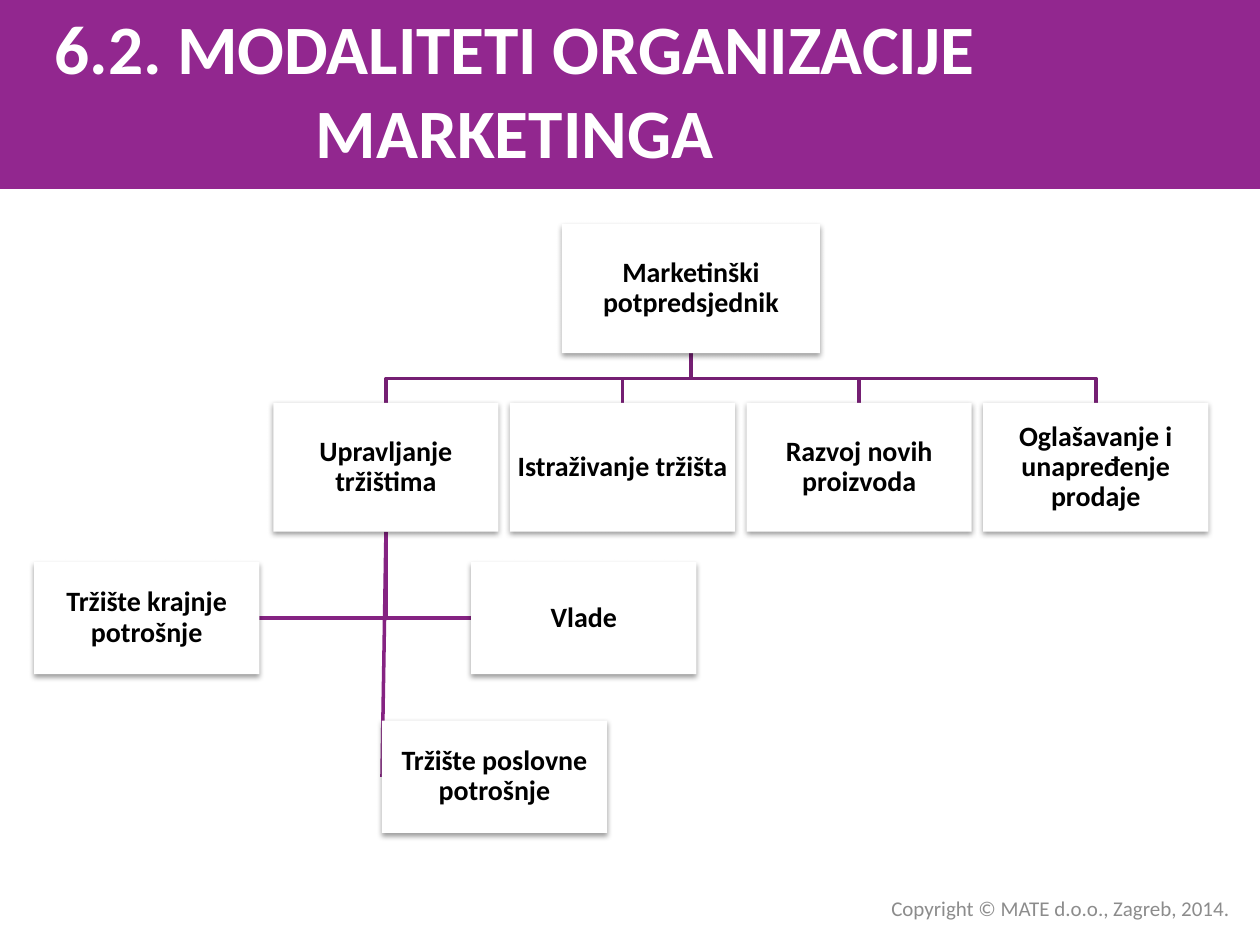
from lxml import etree
from pptx import Presentation
from pptx.dml.color import RGBColor
from pptx.enum.shapes import MSO_CONNECTOR, MSO_SHAPE
from pptx.enum.text import MSO_ANCHOR, PP_ALIGN
from pptx.oxml.ns import qn
from pptx.util import Cm, Pt

RECTANGLE = MSO_SHAPE.RECTANGLE
STRAIGHT = MSO_CONNECTOR.STRAIGHT
MIDDLE = MSO_ANCHOR.MIDDLE
CENTER, RIGHT = PP_ALIGN.CENTER, PP_ALIGN.RIGHT

PURPLE = RGBColor(0x92, 0x27, 0x8F)
STAFF_LINE = RGBColor(0x75, 0x1F, 0x73)
MARKET_LINE = RGBColor(0x85, 0x23, 0x82)
WHITE = RGBColor(0xFF, 0xFF, 0xFF)
BLACK = RGBColor(0, 0, 0)
GRAY = RGBColor(0x8C, 0x8C, 0x8C)
FONT = "Calibri"

# Content
TITLE = "6.2. MODALITETI ORGANIZACIJE MARKETINGA"
COPYRIGHT = "Copyright © MATE d.o.o., Zagreb, 2014."
HEAD = "Marketinški potpredsjednik"
DEPARTMENTS = [
    "Upravljanje tržištima",
    "Istraživanje tržišta",
    "Razvoj novih proizvoda",
    "Oglašavanje i unapređenje prodaje",
]
SIDE_MARKETS = ["Tržište krajnje potrošnje", "Vlade"]
LOWER_MARKET = "Tržište poslovne potrošnje"

# Layout in centimetres: left, top, width, height
BOX_WIDTH, STAFF_HEIGHT, MARKET_HEIGHT = 4.54, 2.6, 2.26
HEAD_AREA = (11.33, 4.52, 5.2, STAFF_HEIGHT)
DEPARTMENT_LEFT, DEPARTMENT_TOP, DEPARTMENT_STEP = 5.51, 8.12, 4.77
BUS_Y = 7.63
SIDE_LEFTS, SIDE_TOP = (0.69, 9.5), 11.33
LOWER_AREA = (7.7, 14.53, BOX_WIDTH, MARKET_HEIGHT)

department_areas = [
    (DEPARTMENT_LEFT + i * DEPARTMENT_STEP, DEPARTMENT_TOP, BOX_WIDTH, STAFF_HEIGHT)
    for i in range(len(DEPARTMENTS))
]
side_areas = [(left, SIDE_TOP, BOX_WIDTH, MARKET_HEIGHT) for left in SIDE_LEFTS]


def lengths(area):
    return [Cm(value) for value in area]


def write_text(shape, text, *, size, color, bold=False, align=CENTER,
               inset=None, spacing=None):
    frame = shape.text_frame
    frame.word_wrap = True
    frame.vertical_anchor = MIDDLE
    if inset is not None:
        frame.margin_left = frame.margin_right = Cm(inset)
        frame.margin_top = frame.margin_bottom = Cm(inset)
    paragraph = frame.paragraphs[0]
    paragraph.text = text
    paragraph.alignment = align
    paragraph.line_spacing = spacing
    font = paragraph.font
    font.name, font.size, font.bold = FONT, Pt(size), bold
    font.color.rgb = color


def add_rectangle(area, color):
    shape = slide.shapes.add_shape(RECTANGLE, *lengths(area))
    shape.shadow.inherit = False
    shape.fill.solid()
    shape.fill.fore_color.rgb = color
    shape.line.fill.background()
    return shape


def add_box(text, area):
    box = add_rectangle(area, WHITE)
    effects = box._element.spPr.find(qn("a:effectLst"))
    shadow = etree.SubElement(effects, qn("a:outerShdw"), blurRad="40000",
                              dist="20000", dir="5400000", rotWithShape="0")
    black = etree.SubElement(shadow, qn("a:srgbClr"), val="000000")
    etree.SubElement(black, qn("a:alpha"), val="38000")
    write_text(box, text, size=16, color=BLACK, bold=True, inset=0.03, spacing=0.9)
    return box


def style_line(line, color):
    line.color.rgb = color
    line.width = Pt(2)


def add_branch(points, color):
    start, *rest = [(Cm(x), Cm(y)) for x, y in points]
    builder = slide.shapes.build_freeform(*start)
    builder.add_line_segments(rest, close=False)
    branch = builder.convert_to_shape()
    branch.fill.background()
    branch.shadow.inherit = False
    style_line(branch.line, color)


def bottom_center(area):
    left, top, width, height = area
    return left + width / 2, top + height


presentation = Presentation()
presentation.slide_width, presentation.slide_height = Cm(25.4), Cm(19.05)
slide = presentation.slides.add_slide(presentation.slide_layouts[6])

# Title band
add_rectangle((0, 0, 25.4, 3.81), PURPLE)
title = slide.shapes.add_textbox(*lengths((0, 0.2, 20.75, 3.18)))
write_text(title, TITLE, size=39.6, color=WHITE, bold=True)

# Branches from the head to the departments
head_x, head_bottom = bottom_center(HEAD_AREA)
for area in reversed(department_areas):
    x = area[0] + BOX_WIDTH / 2
    add_branch([(head_x, head_bottom), (head_x, BUS_Y), (x, BUS_Y),
                (x, DEPARTMENT_TOP)], STAFF_LINE)

# Branches from the first department to its markets
stem_x, stem_top = bottom_center(department_areas[0])
side_y = SIDE_TOP + MARKET_HEIGHT / 2
for end_x in (SIDE_LEFTS[0] + BOX_WIDTH, SIDE_LEFTS[1]):
    add_branch([(stem_x, stem_top), (stem_x, side_y), (end_x, side_y)], MARKET_LINE)
lower_link = slide.shapes.add_connector(STRAIGHT, 0, 0, 0, 0)
style_line(lower_link.line, MARKET_LINE)
etree.SubElement(lower_link._element.spPr, qn("a:effectLst"))

# Boxes, over the branches
add_box(HEAD, HEAD_AREA)
departments = [add_box(*item) for item in zip(DEPARTMENTS, department_areas)]
for text, area in zip(SIDE_MARKETS, side_areas):
    add_box(text, area)
lower_market = add_box(LOWER_MARKET, LOWER_AREA)
lower_link.begin_connect(departments[0], 2)
lower_link.end_connect(lower_market, 1)

# Footer
footer = slide.shapes.add_textbox(*lengths((11.91, 17.93, 13.13, 0.76)))
write_text(footer, COPYRIGHT, size=12, color=GRAY, align=RIGHT)

presentation.save("out.pptx")
